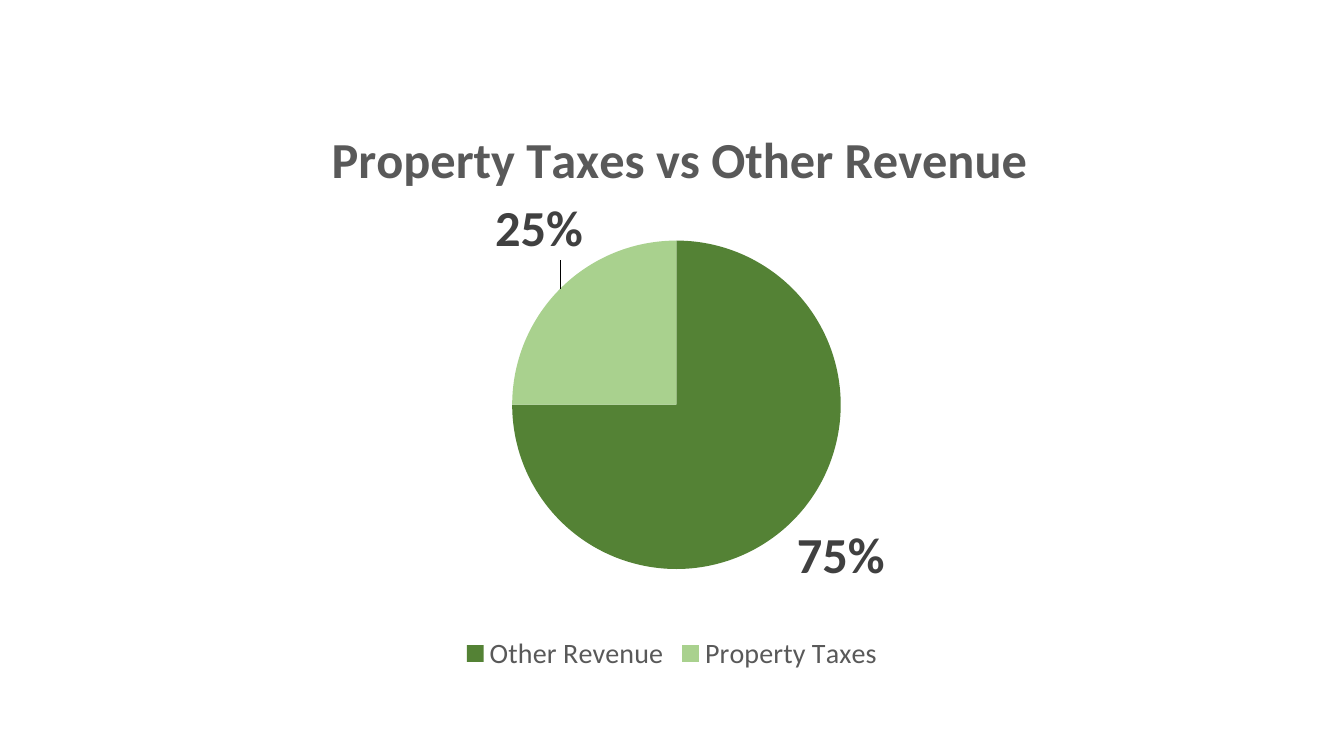
"""Build a slide with a pie chart of property taxes against other revenue."""
import pptx
import pptx.chart.data
import pptx.dml.color
import pptx.enum.chart
import pptx.oxml
import pptx.util
from dataclasses import dataclass

TITLE = "Property Taxes vs Other Revenue"
SERIES = "Series 1"
SHARES = [("Other Revenue", 0.75), ("Property Taxes", 0.25)]

SLIDE_W, SLIDE_H = 13.33, 7.5
CHART_SHARE = (2 / 3, 0.79)
TITLE_AT = {"x": 0.11, "y": 0.06}
PIE_AT = {"x": 0.32, "y": 0.27, "w": 0.37, "h": 0.55}
TAX_LABEL_SHIFT = {"x": 0.03, "y": -0.04}


@dataclass(frozen=True)
class Theme:
    font: str = "Calibri"
    text: str = "595959"
    label: str = "404040"
    slices: tuple = ("548235", "A9D18E")
    base_size: int = 10
    legend_size: int = 20
    large_size: int = 36


THEME = Theme()


def rgb(color):
    return pptx.dml.color.RGBColor.from_string(color)


def style(font, size, color, bold=False):
    font.name, font.size, font.bold = THEME.font, pptx.util.Pt(size), bold
    font.color.rgb = rgb(color)


def layout(place, modes=(), target=None):
    parts = [("layoutTarget", target)] if target else []
    parts += [(f"{axis}Mode", "edge") for axis in modes]
    parts += place.items()
    body = "".join(f'<c:{tag} val="{val}"/>' for tag, val in parts)
    ns = "http://schemas.openxmlformats.org/drawingml/2006/chart"
    return pptx.oxml.parse_xml(
        f'<c:layout xmlns:c="{ns}"><c:manualLayout>{body}</c:manualLayout></c:layout>')


def place_after(parent, tag, new):
    for old in parent.findall(pptx.oxml.ns.qn("c:layout")):
        parent.remove(old)
    parent.find(pptx.oxml.ns.qn(tag)).addnext(new)


def add_pie(s):
    data = pptx.chart.data.CategoryChartData(number_format="0%")
    data.categories = [name for name, _ in SHARES]
    data.add_series(SERIES, [share for _, share in SHARES])
    w, h = SLIDE_W * CHART_SHARE[0], SLIDE_H * CHART_SHARE[1]
    box = [pptx.util.Inches(v) for v in ((SLIDE_W - w) / 2, (SLIDE_H - h) / 2, w, h)]
    return s.shapes.add_chart(pptx.enum.chart.XL_CHART_TYPE.PIE, *box, data).chart


def style_title(chart):
    chart.has_title = True
    tf = chart.chart_title.text_frame
    tf.text = TITLE
    style(tf.paragraphs[0].font, THEME.large_size, THEME.text, True)
    title = chart._chartSpace.chart.find(pptx.oxml.ns.qn("c:title"))
    place_after(title, "c:tx", layout(TITLE_AT, "xy"))


def style_slices(chart):
    plot = chart.plots[0]
    plot.vary_by_categories = True
    series = plot.series[0]
    for i, color in enumerate(THEME.slices):
        fill = series.points[i].format.fill
        fill.solid()
        fill.fore_color.rgb = rgb(color)
    labels = series.data_labels
    labels.show_value = True
    labels.number_format, labels.number_format_is_linked = "0%", False
    labels.position = pptx.enum.chart.XL_LABEL_POSITION.OUTSIDE_END
    style(labels.font, THEME.large_size, THEME.label, True)
    tax_label = series.points[1].data_label
    style(tax_label.font, THEME.large_size, THEME.label, True)
    tax_label.position = pptx.enum.chart.XL_LABEL_POSITION.OUTSIDE_END
    label = labels._element.find(pptx.oxml.ns.qn("c:dLbl"))
    place_after(label, "c:idx", layout(TAX_LABEL_SHIFT))


def style_legend(chart):
    chart.has_legend = True
    chart.legend.position = pptx.enum.chart.XL_LEGEND_POSITION.BOTTOM
    chart.legend.include_in_layout = False
    style(chart.legend.font, THEME.legend_size, THEME.text)


def main():
    prs = pptx.Presentation()
    prs.slide_width = pptx.util.Inches(SLIDE_W)
    prs.slide_height = pptx.util.Inches(SLIDE_H)
    s = prs.slides.add_slide(prs.slide_layouts[6])
    chart = add_pie(s)
    style(chart.font, THEME.base_size, "000000")
    style_title(chart)
    style_slices(chart)
    style_legend(chart)
    plot_area = chart._chartSpace.chart.plotArea
    for old in plot_area.findall(pptx.oxml.ns.qn("c:layout")):
        plot_area.remove(old)
    plot_area.insert(0, layout(PIE_AT, "xy", "inner"))
    prs.save("out.pptx")


if __name__ == "__main__":
    main()
